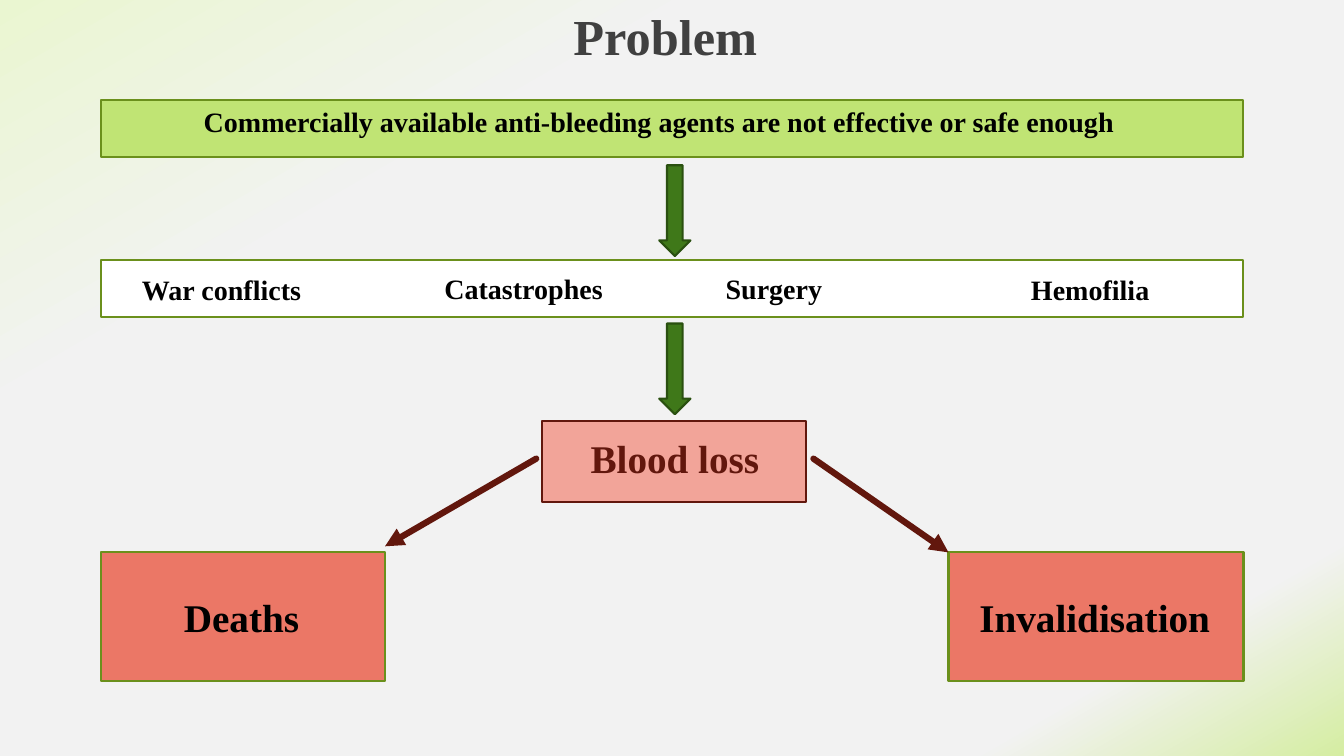
from dataclasses import dataclass

import lxml.etree
import pptx
import pptx.dml.color
import pptx.enum.dml
import pptx.enum.shapes
import pptx.enum.text
import pptx.oxml.ns
import pptx.slide
import pptx.util

# Slide grid: 40 columns by 30 rows
SLIDE_WIDTH, SLIDE_HEIGHT = pptx.util.Inches(13.333), pptx.util.Inches(7.5)
COLUMN, ROW = SLIDE_WIDTH / 40, SLIDE_HEIGHT / 30
BAR_LEFT, BAR_WIDTH, BAR_HEIGHT = 3, 34, 2.28
OUTCOME_TOP, OUTCOME_HEIGHT = 21.92, 5.12
CAPTION_TOP, CAPTION_HEIGHT = 23.36, 2.28
ITEM_HEIGHT = 1.76

COLORS = {
    "title": "404040", "black": "000000", "white": "FFFFFF",
    "lime": "C0E474", "olive": "6B901C",
    "green": "3F7819", "dark green": "2A5010",
    "salmon": "F2A499", "coral": "EB7766", "maroon": "62170D",
}
BACKGROUND_STOPS = {0: "EAF6D1", 27: "F2F2F2", 86: "F2F2F2", 100: "D5EDA2"}

MSO_SHAPE = pptx.enum.shapes.MSO_SHAPE
PP_ALIGN = pptx.enum.text.PP_ALIGN


@dataclass
class Area:
    left: float
    top: float
    width: float
    height: float

    def emu(self) -> list[int]:
        return [round(self.left * COLUMN), round(self.top * ROW),
                round(self.width * COLUMN), round(self.height * ROW)]


@dataclass
class Block:
    area: Area
    fill: str
    line: str
    preset: MSO_SHAPE = MSO_SHAPE.RECTANGLE


@dataclass
class Label:
    text: str
    area: Area
    size: float
    color: str = "black"
    align: PP_ALIGN = PP_ALIGN.CENTER
    fill: str = ""


@dataclass
class Effect:
    start: tuple[float, float]
    end: tuple[float, float]


def rgb(name: str) -> pptx.dml.color.RGBColor:
    return pptx.dml.color.RGBColor.from_string(COLORS[name])


def paint_background(slide: pptx.slide.Slide) -> None:
    qn = pptx.oxml.ns.qn
    fill = slide.background.fill
    fill.gradient()
    fill.gradient_angle = 300
    stops = next(slide.element.iter(qn("a:gsLst")))
    for stop in list(stops):
        stops.remove(stop)
    for percent, color in BACKGROUND_STOPS.items():
        stop = lxml.etree.SubElement(stops, qn("a:gs"), pos=str(percent * 1000))
        lxml.etree.SubElement(stop, qn("a:srgbClr"), val=color)


def draw_block(slide: pptx.slide.Slide, block: Block) -> None:
    shape = slide.shapes.add_shape(block.preset, *block.area.emu())
    shape.shadow.inherit = False
    shape.fill.solid()
    shape.fill.fore_color.rgb = rgb(block.fill)
    shape.line.color.rgb = rgb(block.line)
    shape.line.width = pptx.util.Pt(1.5)


def draw_label(slide: pptx.slide.Slide, label: Label) -> None:
    box = slide.shapes.add_textbox(*label.area.emu())
    if label.fill:
        box.fill.solid()
        box.fill.fore_color.rgb = rgb(label.fill)
    box.text_frame.word_wrap = True
    paragraph = box.text_frame.paragraphs[0]
    paragraph.alignment = label.align
    run = paragraph.add_run()
    run.text = label.text
    font_format = {"name": "Times New Roman", "bold": True,
                   "size": pptx.util.Pt(label.size)}
    for attribute, value in font_format.items():
        setattr(run.font, attribute, value)
    run.font.color.rgb = rgb(label.color)


def draw_effect(slide: pptx.slide.Slide, effect: Effect) -> None:
    qn = pptx.oxml.ns.qn
    points = [round(value * unit) for point in (effect.start, effect.end)
              for value, unit in zip(point, (COLUMN, ROW))]
    arrow = slide.shapes.add_connector(
        pptx.enum.shapes.MSO_CONNECTOR.STRAIGHT, *points)
    arrow.line.color.rgb = rgb("maroon")
    arrow.line.width = pptx.util.Pt(4.5)
    line = arrow.line._get_or_add_ln()
    line.set("cap", "rnd")
    lxml.etree.SubElement(line, qn("a:tailEnd"), type="triangle")
    lxml.etree.SubElement(arrow.element.spPr, qn("a:effectLst"))


BLOCKS = [
    # Blood loss
    Block(Area(16.14, 16.72, 7.86, 3.2), "salmon", "maroon"),
    # Causes bar
    Block(Area(BAR_LEFT, 10.32, BAR_WIDTH, BAR_HEIGHT), "white", "olive"),
    # Deaths and invalidisation
    Block(Area(BAR_LEFT, OUTCOME_TOP, 8.46, OUTCOME_HEIGHT), "coral", "olive"),
    Block(Area(28.23, OUTCOME_TOP, 8.78, OUTCOME_HEIGHT), "coral", "olive"),
    # Problem statement bar
    Block(Area(BAR_LEFT, 3.96, BAR_WIDTH, BAR_HEIGHT), "lime", "olive"),
] + [
    # Arrows between the stages
    Block(Area(19.62, top, 0.93, 3.6), "green", "dark green", MSO_SHAPE.DOWN_ARROW)
    for top in (6.56, 12.84)
]

LABELS = [
    Label("Problem", Area(5.7, 0, 28.2, 5.76), 36, "title"),
    Label("Commercially available anti-bleeding agents are not effective or safe enough",
          Area(BAR_LEFT, 3.96, 33.24, ITEM_HEIGHT), 20),
    Label("Blood loss", Area(15.96, 17.04, 8.25, CAPTION_HEIGHT), 28, "maroon"),
    Label("Deaths", Area(2.91, CAPTION_TOP, 8.55, CAPTION_HEIGHT), 28),
    Label("Invalidisation", Area(28.23, CAPTION_TOP, 8.7, CAPTION_HEIGHT), 28),
] + [
    # Causes of bleeding
    Label(cause, Area(left, top, width, ITEM_HEIGHT), 20,
          align=PP_ALIGN.LEFT, fill="white")
    for cause, left, top, width in (
        ("War conflicts", 3.93, 10.6, 8.25),
        ("Catastrophes", 12.93, 10.56, 5.7),
        ("Surgery", 21.3, 10.56, 7.53),
        ("Hemofilia", 30.39, 10.6, 5.07),
    )
]

EFFECTS = [
    Effect((24.21, 18.2), (28.23, OUTCOME_TOP)),
    Effect((15.96, 18.2), (11.46, 21.68)),
]


def main() -> None:
    deck = pptx.Presentation()
    deck.slide_width, deck.slide_height = SLIDE_WIDTH, SLIDE_HEIGHT
    slide = deck.slides.add_slide(deck.slide_layouts[6])
    paint_background(slide)
    for block in BLOCKS:
        draw_block(slide, block)
    for label in LABELS:
        draw_label(slide, label)
    for effect in EFFECTS:
        draw_effect(slide, effect)
    deck.save("out.pptx")


if __name__ == "__main__":
    main()
